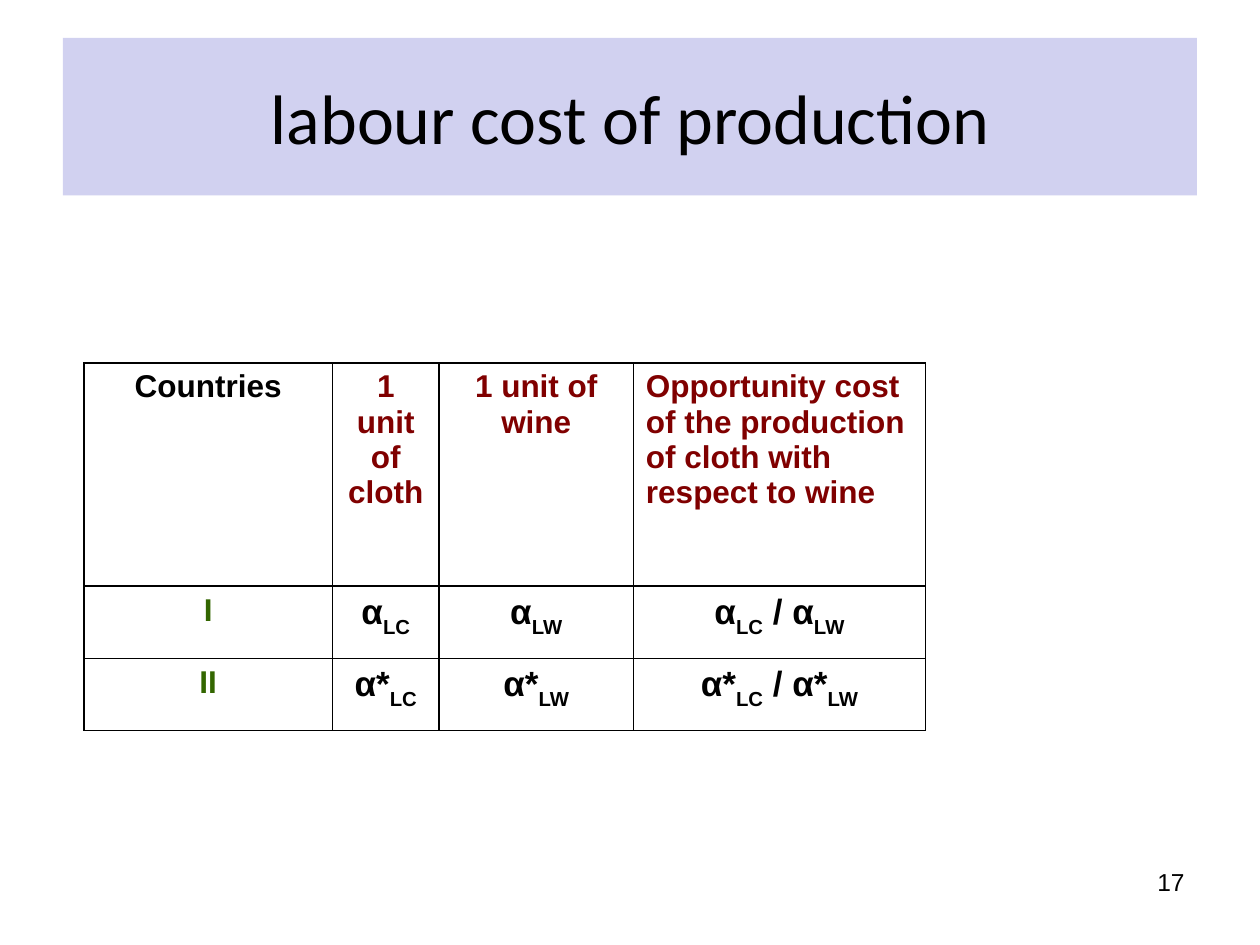
import dataclasses
import pptx
import pptx.util
import pptx.dml.color
import pptx.enum.shapes
import pptx.enum.text
import lxml.etree

Pt = pptx.util.Pt
ALIGN = pptx.enum.text.PP_ALIGN
NS = "http://schemas.openxmlformats.org/drawingml/2006/main"


@dataclasses.dataclass(frozen=True)
class Theme:
    """Colours, fonts and type sizes."""
    black: str = "000000"
    band: str = "D1D1F0"
    red: str = "800000"
    green: str = "336600"
    head: str = "Calibri"
    body: str = "Arial"
    title: int = 40
    math: int = 20
    label: int = 18
    page: int = 14


class Deck:
    """Holds the style and the current slide."""

    def __init__(self, theme):
        self.theme = theme
        self.file = pptx.Presentation()
        self.file.slide_width, self.file.slide_height = Pt(720), Pt(540)
        self.slide = self.file.slides.add_slide(self.file.slide_layouts[6])

    def color(self, code):
        return pptx.dml.color.RGBColor.from_string(code)

    def style(self, para, size, font, color, bold=False, align=ALIGN.CENTER):
        para.alignment = align
        for run in para.runs:
            run.font.size = Pt(size)
            run.font.name = font
            run.font.bold = bold
            run.font.color.rgb = self.color(color)

    def title(self, text, *box):
        shape = self.slide.shapes.add_shape(
            pptx.enum.shapes.MSO_SHAPE.RECTANGLE, *map(Pt, box))
        shape.shadow.inherit = False
        shape.fill.solid()
        shape.fill.fore_color.rgb = self.color(self.theme.band)
        shape.line.fill.background()
        frame = shape.text_frame
        frame.text = text
        frame.vertical_anchor = pptx.enum.text.MSO_ANCHOR.MIDDLE
        self.style(frame.paragraphs[0], self.theme.title, self.theme.head,
                   self.theme.black)

    def number(self, text, *box):
        frame = self.slide.shapes.add_textbox(*map(Pt, box)).text_frame
        frame.word_wrap = True
        frame.text = text
        self.style(frame.paragraphs[0], self.theme.page, self.theme.body,
                   self.theme.black, align=ALIGN.RIGHT)

    def border(self, cell):
        props = cell._tc.get_or_add_tcPr()
        for place, side in enumerate(("lnL", "lnR", "lnT", "lnB")):
            line = lxml.etree.Element(f"{{{NS}}}{side}", w=str(Pt(1)))
            fill = lxml.etree.SubElement(line, f"{{{NS}}}solidFill")
            lxml.etree.SubElement(fill, f"{{{NS}}}srgbClr", val=self.theme.black)
            props.insert(place, line)

    def cell(self, cell, text, size, color, align=ALIGN.CENTER):
        cell.fill.background()
        self.border(cell)
        para = cell.text_frame.paragraphs[0]
        for spot, part in enumerate(text.split("_")):
            run = para.add_run()
            run.text = part
            if spot % 2:
                run._r.get_or_add_rPr().set("baseline", "-30000")
        self.style(para, size, self.theme.body, color, True, align)

    def table(self, left, top, cols, rows, cells):
        table = self.slide.shapes.add_table(
            len(rows), len(cols), Pt(left), Pt(top),
            Pt(sum(cols)), Pt(sum(rows))).table
        for col, width in zip(table.columns, cols):
            col.width = Pt(width)
        for row, height, line in zip(table.rows, rows, cells):
            row.height = Pt(height)
            for cell, item in zip(row.cells, line):
                self.cell(cell, *item)


def main():
    theme = Theme()
    deck = Deck(theme)
    deck.number("17", 516, 492, 168, 37.5)
    deck.title("labour cost of production", 36, 21.6, 648, 90)
    cells = [[
        ("Countries", theme.label, theme.black),
        ("1 unit of cloth", theme.label, theme.red),
        ("1 unit of wine", theme.label, theme.red),
        ("Opportunity cost of the production of cloth with respect to wine",
         theme.label, theme.red, ALIGN.LEFT),
    ]]
    for name, cost in (("Ι", "α"), ("ΙΙ", "α*")):
        cloth, wine = f"{cost}_LC", f"{cost}_LW"
        cells.append([(name, theme.label, theme.green)] + [
            (text, theme.math, theme.black)
            for text in (cloth, wine, f"{cloth}_ / {wine}")])
    deck.table(48, 207.5, (142, 61, 111, 167), (127.5, 41.25, 41.25), cells)
    deck.file.save("out.pptx")


if __name__ == "__main__":
    main()
